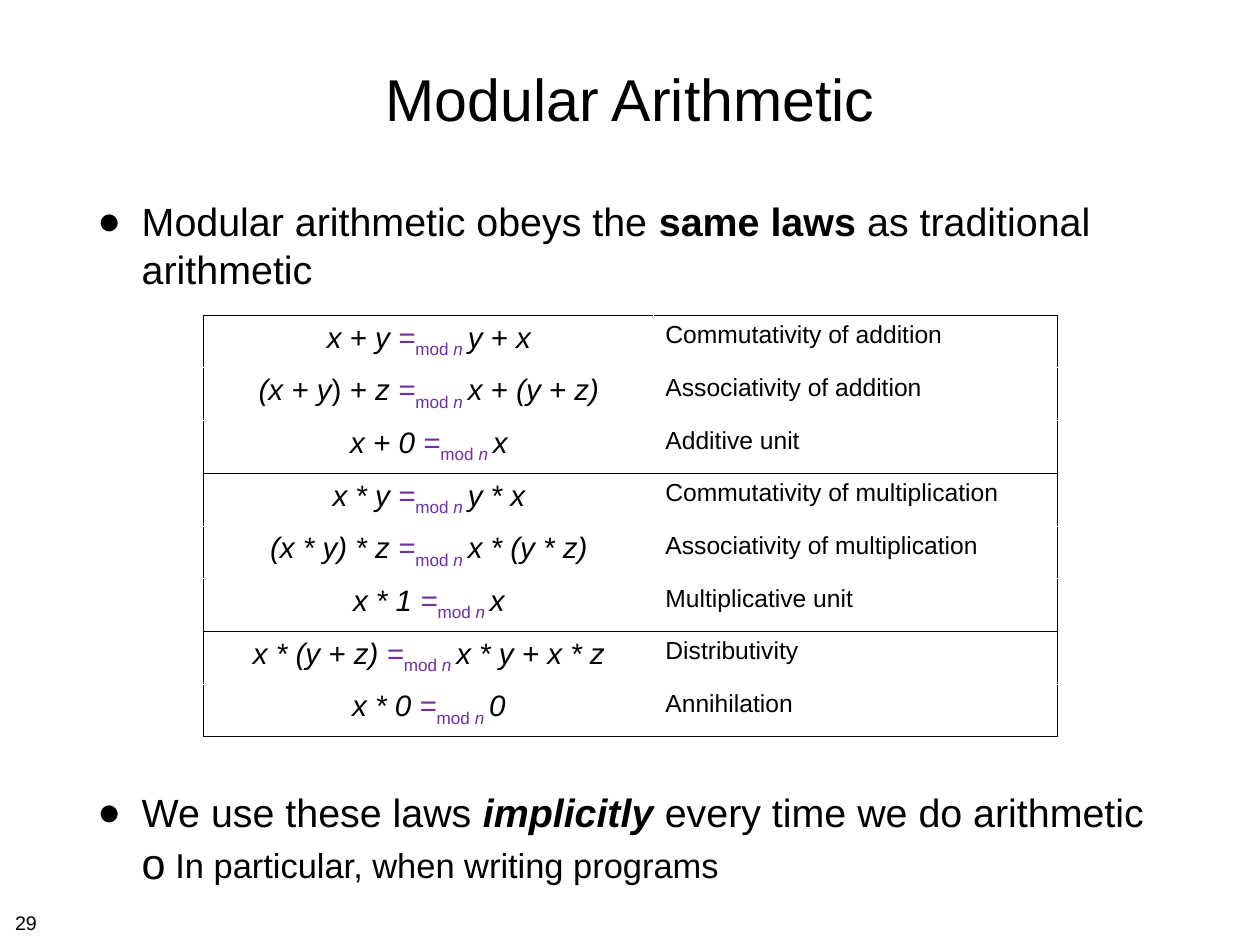
from lxml import etree
from pptx import Presentation
from pptx.dml.color import RGBColor
from pptx.enum.text import MSO_ANCHOR, MSO_AUTO_SIZE, PP_ALIGN
from pptx.oxml.ns import qn
from pptx.util import Pt

CENTER, LEFT = PP_ALIGN.CENTER, PP_ALIGN.LEFT
MIDDLE = MSO_ANCHOR.MIDDLE
NO_AUTOFIT = MSO_AUTO_SIZE.NONE
TITLE_ONLY = 5
EMU_PER_PX = 9144
FONT = "Arial"
BLACK, WHITE, PURPLE = "000000", "FFFFFF", "7030A0"
LAW_GROUPS = [
    [
        ("x + y ", "y + x", "Commutativity of addition"),
        ("(x + y|)| + z ", "x + (y + z)", "Associativity of addition"),
        ("x + 0 ", "x", "Additive unit"),
    ],
    [
        ("x * y ", "y * x", "Commutativity of multiplication"),
        ("(x * y) * z ", "x * (y * z)", "Associativity of multiplication"),
        ("x * 1 ", "x", "Multiplicative unit"),
    ],
    [
        ("x * (y + z) ", "x * y + x * z", "Distributivity"),
        ("x * 0 ", "0", "Annihilation"),
    ],
]


def px(length):
    return length * EMU_PER_PX


def color(value):
    return RGBColor.from_string(value)


def set_font(font, size):
    font.name = FONT
    font.size = Pt(size)
    font.color.rgb = color(BLACK)


def set_insets(frame, horizontal, vertical):
    frame.margin_left = frame.margin_right = px(horizontal)
    frame.margin_top = frame.margin_bottom = px(vertical)


def add_run(paragraph, text, size, bold=False, italic=False):
    run = paragraph.add_run()
    run.text = text
    set_font(run.font, size)
    run.font.bold = bold
    run.font.italic = italic
    return run


def set_bullet(paragraph, character, margin, hanging, size=100):
    properties = paragraph._p.get_or_add_pPr()
    properties.set("marL", str(px(margin)))
    properties.set("indent", str(-px(hanging)))
    bullet_color = etree.SubElement(properties, qn("a:buClr"))
    etree.SubElement(bullet_color, qn("a:srgbClr"), val=BLACK)
    etree.SubElement(properties, qn("a:buSzPct"), val=str(size * 1000))
    etree.SubElement(properties, qn("a:buFont"), typeface=FONT)
    etree.SubElement(properties, qn("a:buChar"), char=character)


def add_text_box(slide, box, wrap=True):
    frame = slide.shapes.add_textbox(*map(px, box)).text_frame
    frame.word_wrap = wrap
    set_insets(frame, 6, 6)
    return frame


def add_title(slide, box, text):
    title = slide.shapes.title
    title.left, title.top, title.width, title.height = map(px, box)
    frame = title.text_frame
    frame.text = text
    frame.auto_size = NO_AUTOFIT
    frame.vertical_anchor = MIDDLE
    set_insets(frame, 6, 6)
    paragraph = frame.paragraphs[0]
    paragraph.alignment = CENTER
    set_font(paragraph.font, 48)


def add_statement(slide, box, before, stressed, after, italic=False, detail=None):
    frame = add_text_box(slide, box)
    paragraph = frame.paragraphs[0]
    paragraph.space_before = Pt(8)
    set_bullet(paragraph, "●", 50, 50)
    add_run(paragraph, before, 32)
    add_run(paragraph, stressed, 32, bold=True, italic=italic)
    add_run(paragraph, after, 32)
    if detail:
        paragraph = frame.add_paragraph()
        paragraph.level = 1
        paragraph.space_before = Pt(7)
        set_bullet(paragraph, "o", 88, 38, 125)
        add_run(paragraph, detail, 28)


def add_equation(paragraph, left, right):
    for index, part in enumerate(left.split("|")):
        add_run(paragraph, part, 24, italic=index % 2 == 0)
    equals = add_run(paragraph, "=", 24, italic=True)
    modulus = add_run(paragraph, "mod", 24)
    variable = add_run(paragraph, " n ", 24, italic=True)
    for run in (equals, modulus, variable):
        run.font.color.rgb = color(PURPLE)
    for run in (modulus, variable):
        run._r.get_or_add_rPr().set("baseline", "-25000")
    add_run(paragraph, right, 24, italic=True)


def set_borders(cell, left, right, top, bottom):
    properties = cell._tc.get_or_add_tcPr()
    for side, value in zip("LRTB", (left, right, top, bottom)):
        line = etree.SubElement(properties, qn(f"a:ln{side}"), w=str(Pt(1)))
        fill = etree.SubElement(line, qn("a:solidFill"))
        etree.SubElement(fill, qn("a:srgbClr"), val=value)


def add_laws_table(slide, box):
    row_count = sum(map(len, LAW_GROUPS))
    table = slide.shapes.add_table(row_count, 2, *map(px, box)).table
    table.first_row = table.horz_banding = False
    equation_width = 508
    table.columns[0].width = px(equation_width)
    table.columns[1].width = px(box[2] - equation_width)
    row_index = 0
    for group in LAW_GROUPS:
        for position, (left, right, name) in enumerate(group):
            top = BLACK if position == 0 else WHITE
            bottom = BLACK if position == len(group) - 1 else WHITE
            equation_cell, name_cell = table.rows[row_index].cells
            set_borders(equation_cell, BLACK, WHITE, top, bottom)
            set_borders(name_cell, WHITE, BLACK, top, bottom)
            for cell in (equation_cell, name_cell):
                cell.fill.background()
                set_insets(cell, 13, 7)
            equation = equation_cell.text_frame.paragraphs[0]
            equation.alignment = CENTER
            add_equation(equation, left, right)
            name_cell.text = name
            label = name_cell.text_frame.paragraphs[0]
            label.alignment = LEFT
            set_font(label.font, 20)
            row_index += 1


def add_slide_number(slide, box, number):
    frame = add_text_box(slide, box, wrap=False)
    frame.text = number
    set_font(frame.paragraphs[0].font, 16)


def main():
    presentation = Presentation()
    presentation.slide_width, presentation.slide_height = px(1422), px(1067)
    slide = presentation.slides.add_slide(presentation.slide_layouts[TITLE_ONLY])
    add_title(slide, (104, 28, 1214, 164), "Modular Arithmetic")
    add_statement(slide, (104, 217, 1214, 130), "Modular arithmetic obeys the ",
                  "same laws ", "as traditional arithmetic")
    add_laws_table(slide, (230, 356, 963, 475))
    add_statement(slide, (104, 884, 1214, 130), "We use these laws ", "implicitly ",
                  "every time we do arithmetic", italic=True,
                  detail="In particular, when writing programs")
    add_slide_number(slide, (11, 1023, 37, 35), "29")
    presentation.save("out.pptx")


if __name__ == "__main__":
    main()
